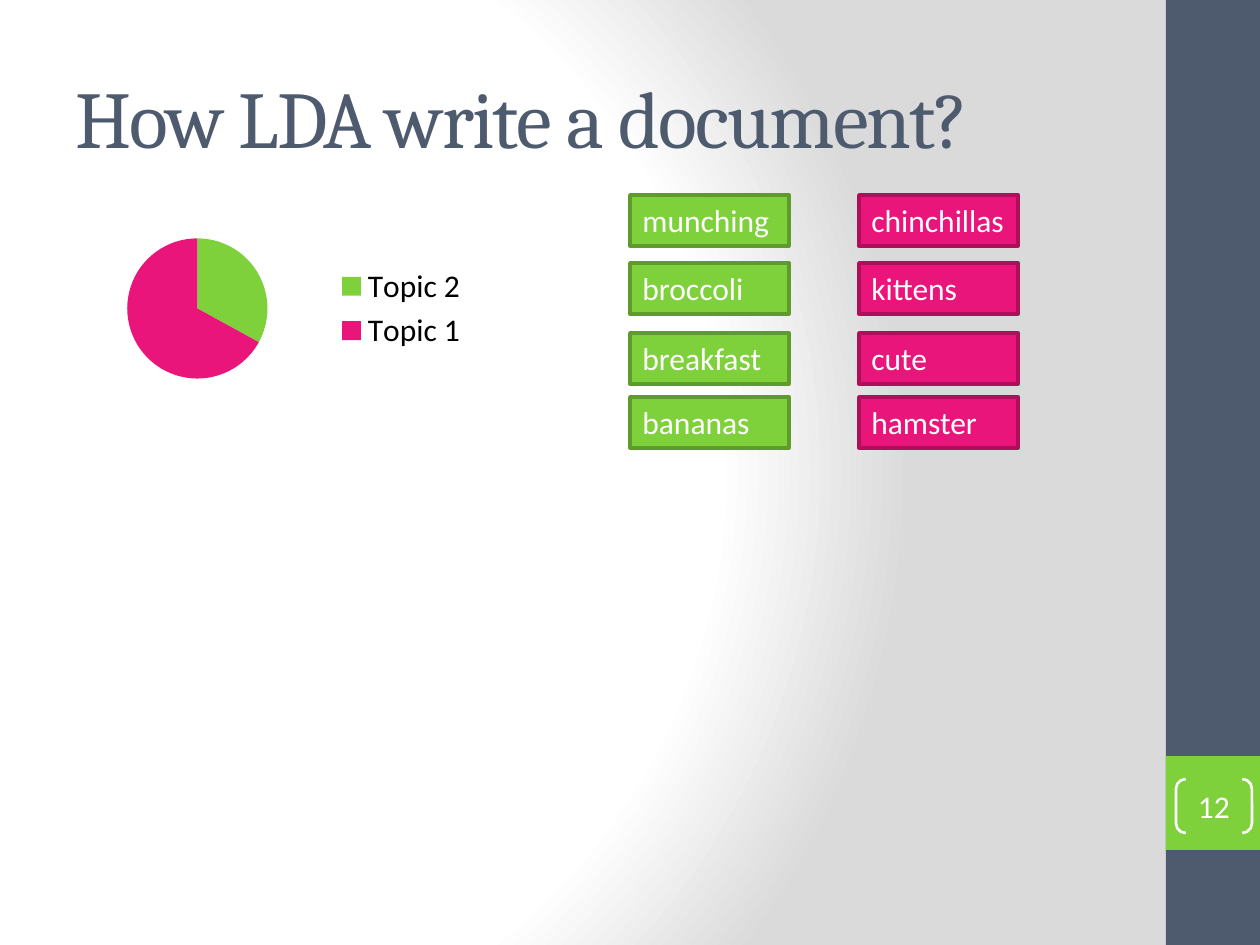
from lxml import etree
from pptx import Presentation
from pptx.chart.data import CategoryChartData as ChartData
from pptx.dml.color import RGBColor
from pptx.enum.chart import XL_CHART_TYPE as ChartType, XL_LEGEND_POSITION as LegendPosition
from pptx.enum.shapes import MSO_SHAPE as Shape
from pptx.enum.text import MSO_ANCHOR as Anchor, MSO_AUTO_SIZE as AutoSize, PP_ALIGN as Align
from pptx.oxml.ns import qn
from pptx.util import Emu, Pt

EMU_PER_PX = 914400 / 126
SLATE, GREEN, PINK, WHITE = "4E5B6F", "7FD13B", "EA157A", "FFFFFF"
DARK_GREEN, DARK_PINK = "5E9B2C", "AD105A"


def px(*lengths):
    return [Emu(round(length * EMU_PER_PX)) for length in lengths]


def color(value):
    return RGBColor.from_string(value)


def write(shape, text, size=18, font="Calibri", fill=WHITE, align=Align.LEFT,
          anchor=Anchor.TOP, inset=None, grow=False, spacing=None):
    frame = shape.text_frame
    frame.word_wrap = True
    frame.auto_size = AutoSize.SHAPE_TO_FIT_TEXT if grow else AutoSize.NONE
    frame.vertical_anchor = anchor
    if inset is not None:
        frame.margin_left = frame.margin_right = inset
        frame.margin_top = frame.margin_bottom = inset
    paragraph = frame.paragraphs[0]
    paragraph.alignment = align
    run = paragraph.add_run()
    run.text = text
    run.font.size = Pt(size)
    run.font.name = font
    run.font.color.rgb = color(fill)
    if spacing is not None:
        run.font._element.set("spc", str(spacing))


class SlideBuilder:
    def __init__(self, presentation):
        self.slide = presentation.slides.add_slide(presentation.slide_layouts[5])

    def background(self, stops, focus):
        fill = self.slide.background.fill
        fill.gradient()
        gradient = self.slide._element.find(".//" + qn("a:gradFill"))
        for child in list(gradient):
            gradient.remove(child)
        stop_list = etree.SubElement(gradient, qn("a:gsLst"))
        for position, value in stops:
            stop = etree.SubElement(stop_list, qn("a:gs"), pos=str(position * 1000))
            etree.SubElement(stop, qn("a:srgbClr"), val=value)
        circle = etree.SubElement(gradient, qn("a:path"), path="circle")
        sides = {side: str(share * 1000) for side, share in zip("ltrb", focus)}
        etree.SubElement(circle, qn("a:fillToRect"), **sides)

    def title(self, text, *box):
        shape = self.slide.shapes.title
        shape.left, shape.top, shape.width, shape.height = px(*box)
        write(shape, text, size=46, font="Cambria", fill=SLATE, anchor=Anchor.MIDDLE, spacing=-100)

    def shape(self, kind, *box, fill=None, line=None, width=2):
        shape = self.slide.shapes.add_shape(kind, *px(*box))
        shape.shadow.inherit = False
        if fill:
            shape.fill.solid()
            shape.fill.fore_color.rgb = color(fill)
        else:
            shape.fill.background()
        if line:
            shape.line.color.rgb = color(line)
            shape.line.width = Pt(width)
        else:
            shape.line.fill.background()
        return shape

    def word(self, text, left, top, fill, line):
        shape = self.shape(Shape.RECTANGLE, left, top, 159, 51, fill=fill, line=line)
        write(shape, text, grow=True)

    def page_number(self, text, *box):
        shape = self.shape(Shape.DOUBLE_BRACKET, *box, line=WHITE, width=1.5)
        shape.adjustments[0] = 0.18
        write(shape, text, align=Align.CENTER, anchor=Anchor.MIDDLE, inset=0)

    def pie(self, shares, fills, *box):
        data = ChartData()
        data.categories = list(shares)
        data.add_series("Series 1", list(shares.values()))
        chart = self.slide.shapes.add_chart(ChartType.PIE, *px(*box), data).chart
        chart.has_title = False
        chart.font.size = Pt(18)
        chart.font.name = "Calibri"
        chart.font.color.rgb = color("000000")
        chart.has_legend = True
        chart.legend.position = LegendPosition.RIGHT
        chart.legend.include_in_layout = False
        plot = chart.plots[0]
        plot.vary_by_categories = True
        for index, fill in enumerate(fills):
            point = plot.series[0].points[index].format
            point.fill.solid()
            point.fill.fore_color.rgb = color(fill)
            point.line.fill.background()


def main():
    presentation = Presentation()
    presentation.slide_width, presentation.slide_height = px(1260, 945)
    builder = SlideBuilder(presentation)
    builder.background([(0, WHITE), (75, WHITE), (100, "DADADA")], (20, 50, 100, 50))
    builder.shape(Shape.RECTANGLE, 1166, 0, 94, 945, fill=SLATE)
    builder.shape(Shape.RECTANGLE, 1166, 756, 94, 94, fill=GREEN)
    builder.title("How LDA write a document?", 63, 38, 1050, 157)
    builder.pie({"Topic 2": 33, "Topic 1": 67}, (GREEN, PINK), 63, 221, 418, 175)

    row_tops = (195, 263, 333, 397)
    topics = (
        (630, GREEN, DARK_GREEN, ("munching", "broccoli", "breakfast", "bananas")),
        (859, PINK, DARK_PINK, ("chinchillas", "kittens", "cute", "hamster")),
    )
    for left, fill, line, words in topics:
        for top, word in zip(row_tops, words):
            builder.word(word, left, top, fill, line)

    builder.page_number("12", 1176, 779, 76, 54)
    presentation.save("out.pptx")


if __name__ == "__main__":
    main()
